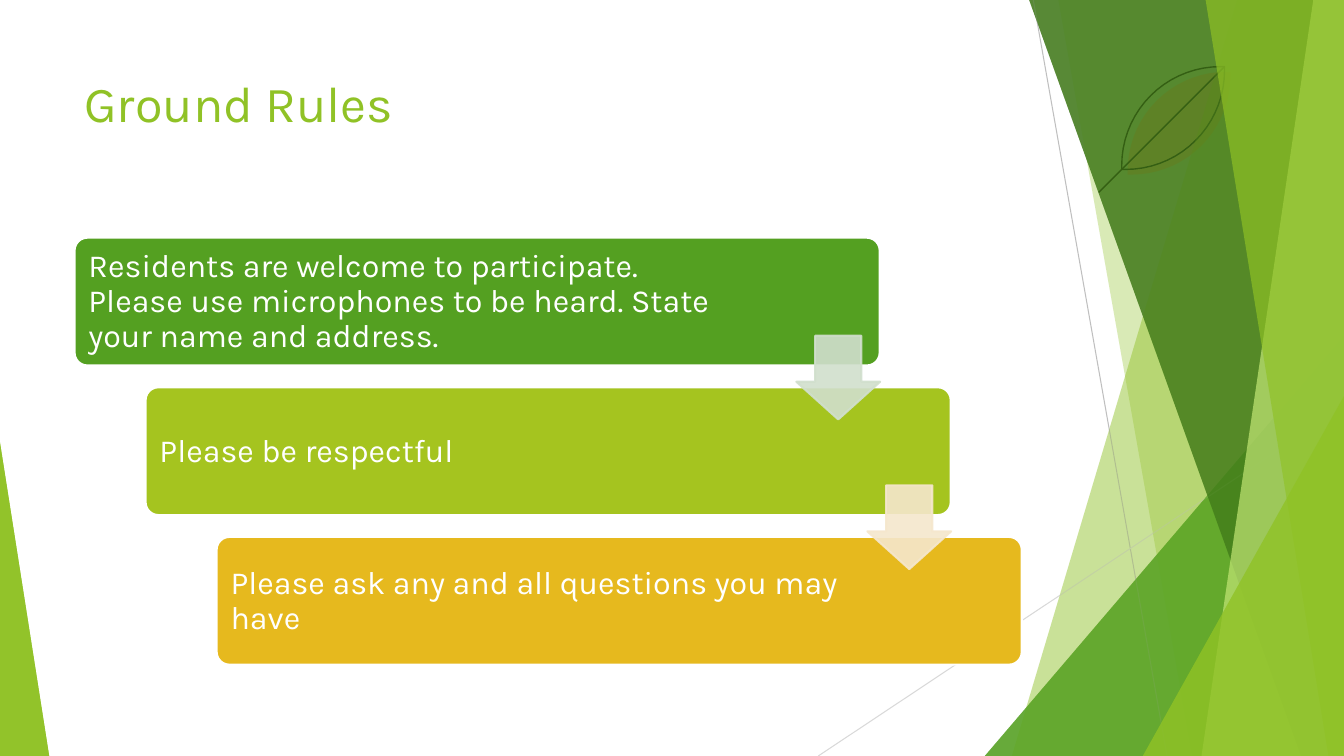
from math import cos, radians, sin

from lxml.etree import SubElement
from pptx import Presentation
from pptx.dml.color import RGBColor as RGB
from pptx.enum.shapes import MSO_CONNECTOR, MSO_SHAPE as SHAPE
from pptx.enum.text import MSO_ANCHOR as ANCHOR
from pptx.oxml.ns import qn
from pptx.util import Cm, Pt

LIME = RGB(0x90, 0xC2, 0x26)
PALE_LIME = RGB(0xC0, 0xE4, 0x74)
GREEN = RGB(0x54, 0xA0, 0x21)
DARK_GREEN = RGB(0x3F, 0x78, 0x19)
OLIVE = RGB(0xA5, 0xC4, 0x1F)
GOLD = RGB(0xE6, 0xB9, 0x1E)
ORANGE = RGB(0xE7, 0x66, 0x18)
MIST = RGB(0xD1, 0xDF, 0xCD)
CREAM = RGB(0xF5, 0xE7, 0xCD)
GREY = RGB(0xBF, 0xBF, 0xBF)
LIGHT_GREY = RGB(0xD9, 0xD9, 0xD9)
BLACK = RGB(0, 0, 0)
WHITE = RGB(0xFF, 0xFF, 0xFF)
W, H = 33.87, 19.05

BANDS_BACK = [(31.19, 25.5, LIME, 30), (26.67, 30.05, LIME, 20)]
BANDS_FRONT = [(25.93, 32.79, DARK_GREEN, 70), (33.1, 30.28, PALE_LIME, 70),
               (30.38, 33.48, LIME, 65)]
WEDGE_BACK = [(24.82, 8.46, 9.05, 1, GREEN, 72)]
WEDGES_FRONT = [(28.8, 9.98, 5.07, 1, LIME, 80), (0, 11.15, 1.24, 0, LIME, 85)]


def paint(sp, fill, alpha=100, line=None, width=1.5):
    sp.shadow.inherit = False
    colors = []
    if fill is None:
        sp.fill.background()
    else:
        sp.fill.solid()
        sp.fill.fore_color.rgb = fill
        colors.append(sp.fill)
    if line is None:
        sp.line.fill.background()
    else:
        sp.line.color.rgb = line
        sp.line.width = Pt(width)
    if alpha < 100:
        for clr in sp._element.spPr.iter(qn("a:srgbClr")):
            SubElement(clr, qn("a:alpha"), val=str(alpha * 1000))


def add_facets(shapes):
    for bands, wedges in ((BANDS_BACK, WEDGE_BACK), (BANDS_FRONT, WEDGES_FRONT)):
        for top_x, bottom_x, color, alpha in bands:
            fb = shapes.build_freeform(Cm(top_x), Cm(-0.02))
            fb.add_line_segments([(Cm(W), Cm(-0.02)), (Cm(W), Cm(H)), (Cm(bottom_x), Cm(H))])
            paint(fb.convert_to_shape(), color, alpha)
        for x, y, w, apex, color, alpha in wedges:
            sp = shapes.add_shape(SHAPE.ISOSCELES_TRIANGLE, Cm(x), Cm(y), Cm(w), Cm(H - y))
            sp.adjustments[0] = apex
            paint(sp, color, alpha)


prs = Presentation()
prs.slide_width, prs.slide_height = Cm(W), Cm(H)
s = prs.slides.add_slide(prs.slide_layouts[6])
shapes = s.shapes

add_facets(shapes)
veil = shapes.add_shape(SHAPE.RECTANGLE, Cm(18.49), 0, Cm(W - 18.49), Cm(H))
paint(veil, WHITE, 20)

SIDE, RADIUS = 2.59, 2.49
ANGLES = [radians(a) for a in range(0, 91, 5)]
for x, y, fill, alpha, line in ((28.42, 1.81, ORANGE, 40, None), (28.27, 1.68, None, 100, BLACK)):
    near, far = RADIUS, SIDE - RADIUS
    pts = [(x + near - RADIUS * sin(a), y + near - RADIUS * cos(a)) for a in ANGLES]
    pts.append((x, y + SIDE))
    pts += [(x + far + RADIUS * sin(a), y + far + RADIUS * cos(a)) for a in ANGLES]
    fb = shapes.build_freeform(Cm(x + SIDE), Cm(y))
    fb.add_line_segments([(Cm(px), Cm(py)) for px, py in pts])
    paint(fb.convert_to_shape(), fill, alpha, line, 1)

for x1, y1, x2, y2, color, width in (
    (30.86, 1.68, 27.69, 4.85, BLACK, 1),
    (26.04, 0, 29.41, H, GREY, 0.75),
    (W, 10.24, 20.62, H, LIGHT_GREY, 0.75),
):
    cn = shapes.add_connector(MSO_CONNECTOR.STRAIGHT, Cm(x1), Cm(y1), Cm(x2), Cm(y2))
    cn.line.color.rgb = color
    cn.line.width = Pt(width)
    SubElement(cn._element.spPr, qn("a:effectLst"))

add_facets(shapes)

LEFT, TOP, STEP_X, STEP_Y = 1.88, 5.99, 1.79, 3.77
RULES = [
    ("Residents are welcome to participate. Please use microphones to be heard. "
     "State your name and address.", GREEN, 16.81),
    ("Please be respectful", OLIVE, 16.21),
    ("Please ask any and all questions you may have", GOLD, 16.21),
]
texts = [("Ground Rules", LEFT, 1.7, 23.88, 3.66, 36, LIME, 1, ANCHOR.TOP, 0.13)]
for i, (text, color, w) in enumerate(RULES):
    x, y = LEFT + i * STEP_X, TOP + i * STEP_Y
    sp = shapes.add_shape(SHAPE.ROUNDED_RECTANGLE, Cm(x), Cm(y), Cm(20.29), Cm(3.22))
    sp.adjustments[0] = 0.1
    paint(sp, color, line=WHITE)
    texts.append((text, x + 0.1, y + 0.1, w, 3.04, 23, WHITE, 0.9, ANCHOR.MIDDLE, 0.25))

for text, x, y, w, h, size, color, spacing, anchor, inset in texts:
    tf = shapes.add_textbox(Cm(x), Cm(y), Cm(w), Cm(h)).text_frame
    frame = {"word_wrap": True, "vertical_anchor": anchor, "margin_left": Cm(0.25),
             "margin_right": Cm(0.25), "margin_top": Cm(inset), "margin_bottom": Cm(inset)}
    for name, value in frame.items():
        setattr(tf, name, value)
    p = tf.paragraphs[0]
    p.line_spacing = spacing
    r = p.add_run()
    r.text = text
    for name, value in {"name": "Karla", "size": Pt(size)}.items():
        setattr(r.font, name, value)
    r.font.color.rgb = color

for i, color in enumerate((MIST, CREAM)):
    sp = shapes.add_shape(SHAPE.DOWN_ARROW, Cm(20.07 + i * STEP_X), Cm(8.46 + i * STEP_Y),
                          Cm(2.11), Cm(2.11))
    sp.adjustments[0], sp.adjustments[1] = 0.55, 0.45
    paint(sp, color, 90, color)

prs.save("out.pptx")
